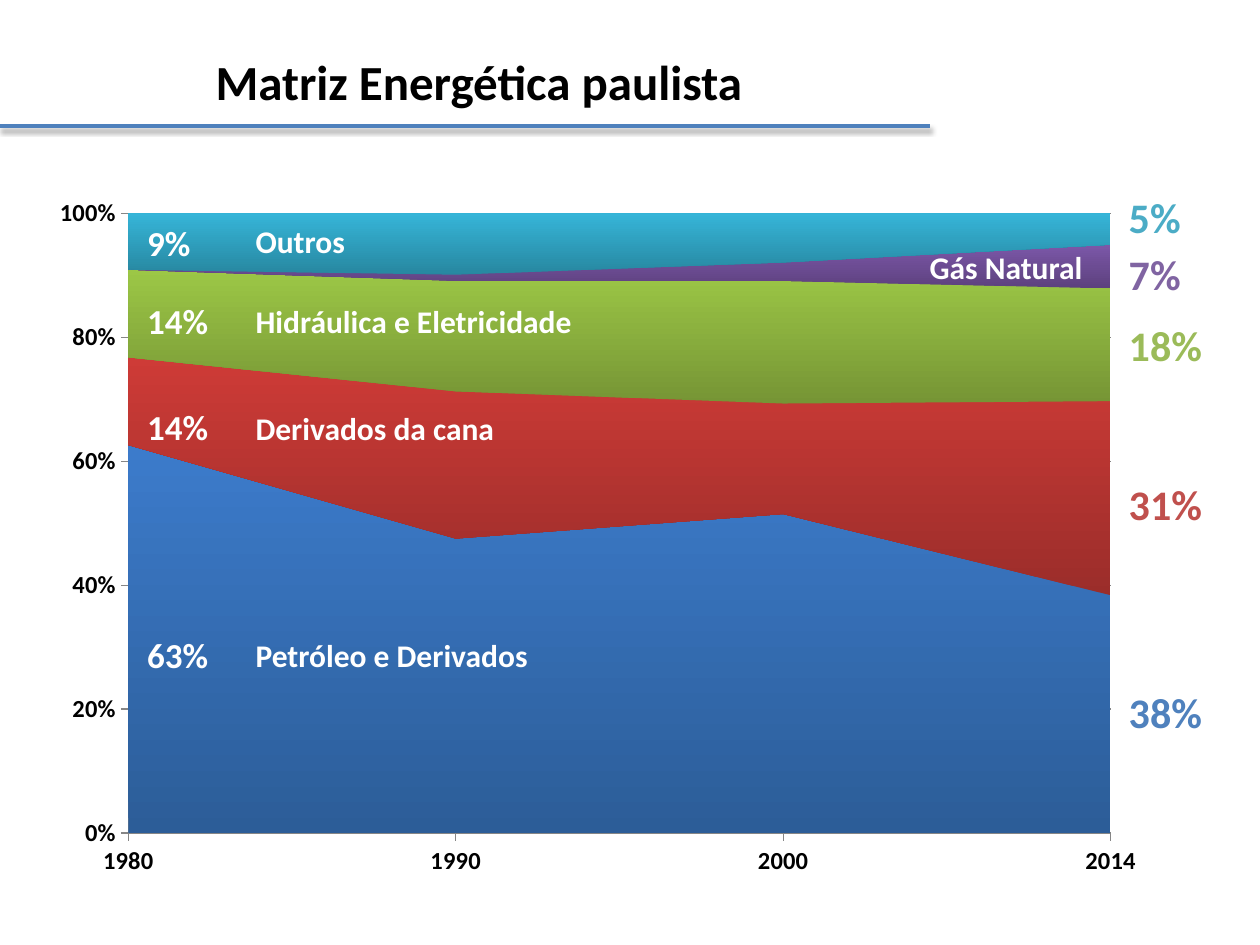
from typing import NamedTuple

import pptx
import pptx.chart.data
import pptx.dml.color
import pptx.enum.chart
import pptx.enum.shapes
import pptx.enum.text
import pptx.oxml
import pptx.oxml.ns
import pptx.util

Inches = pptx.util.Inches
Pt = pptx.util.Pt
RGBColor = pptx.dml.color.RGBColor

FONT = "Calibri"
BLACK = RGBColor(0x00, 0x00, 0x00)
WHITE = RGBColor(0xFF, 0xFF, 0xFF)
GRAY = RGBColor(0x86, 0x86, 0x86)
BLUE = RGBColor(0x4F, 0x81, 0xBD)
RED = RGBColor(0xC0, 0x50, 0x4D)
GREEN = RGBColor(0x9B, 0xBB, 0x59)
PURPLE = RGBColor(0x80, 0x64, 0xA2)
TEAL = RGBColor(0x4B, 0xAC, 0xC6)

YEARS = ["1980", "1990", "2000", "2014"]


class Source(NamedTuple):
    """One energy source: its shares by year and the shades of its area."""
    shares: tuple[int, ...]
    dark: RGBColor
    light: RGBColor


class Label(NamedTuple):
    text: str
    left: float
    top: float
    width: float
    height: float
    size: int
    color: RGBColor


SOURCES = [
    Source((62, 48, 52, 38), RGBColor(0x2C, 0x5D, 0x98), RGBColor(0x3C, 0x7B, 0xCB)),
    Source((14, 24, 18, 31), RGBColor(0x9B, 0x2D, 0x2A), RGBColor(0xCE, 0x3B, 0x37)),
    Source((14, 18, 20, 18), RGBColor(0x76, 0x95, 0x35), RGBColor(0x9C, 0xC7, 0x46)),
    Source((0, 1, 3, 7), RGBColor(0x5D, 0x41, 0x7E), RGBColor(0x7B, 0x57, 0xA8)),
    Source((9, 10, 8, 5), RGBColor(0x27, 0x87, 0xA0), RGBColor(0x36, 0xB5, 0xD8)),
]

LABELS = [
    *(Label(share, 8.86, top, 0.79, 0.5, 24, color) for share, top, color in [
        ("5%", 1.47, TEAL), ("7%", 1.92, PURPLE), ("18%", 2.49, GREEN),
        ("31%", 3.75, RED), ("38%", 5.4, BLUE)]),
    *(Label(name, 1.93, top, 4.41, 0.4, 18, WHITE) for name, top in [
        ("Petróleo e Derivados", 5.0), ("Derivados da cana", 3.2),
        ("Hidráulica e Eletricidade", 2.35), ("Outros", 1.71)]),
    Label("Gás Natural", 7.28, 1.92, 1.57, 0.4, 18, WHITE),
    *(Label(share, 1.07, top, 0.71, 0.44, 20, WHITE) for share, top in [
        ("9%", 1.71), ("14%", 2.33), ("14%", 3.17), ("63%", 4.98)]),
]

RULE_SHADOW = (
    f'<a:effectLst {pptx.oxml.ns.nsdecls("a")}>'
    '<a:outerShdw blurRad="40000" dist="20000" dir="5400000" rotWithShape="0">'
    '<a:srgbClr val="000000"><a:alpha val="38000"/></a:srgbClr>'
    '</a:outerShdw></a:effectLst>'
)
PLOT_LAYOUT = (
    f'<c:layout {pptx.oxml.ns.nsdecls("c")}><c:manualLayout>'
    '<c:layoutTarget val="inner"/><c:xMode val="edge"/><c:yMode val="edge"/>'
    '<c:x val="0.08"/><c:y val="0.04"/><c:w val="0.88"/><c:h val="0.88"/>'
    '</c:manualLayout></c:layout>'
)


def style_font(font, size: int, color: RGBColor) -> None:
    font.name = FONT
    font.size = Pt(size)
    font.bold = True
    font.color.rgb = color


def add_header(slide) -> None:
    rule = slide.shapes.add_connector(
        pptx.enum.shapes.MSO_CONNECTOR.STRAIGHT,
        Inches(0), Inches(1), Inches(7.38), Inches(1))
    rule.line.color.rgb = BLUE
    rule.line.width = Pt(2)
    rule._element.spPr.append(pptx.oxml.parse_xml(RULE_SHADOW))

    title = slide.shapes.title
    title.left, title.top = Inches(0.28), Inches(0.29)
    title.width, title.height = Inches(7.04), Inches(0.7)
    title.text_frame.text = "Matriz Energética paulista"
    title.text_frame.vertical_anchor = pptx.enum.text.MSO_ANCHOR.MIDDLE
    heading = title.text_frame.paragraphs[0]
    heading.alignment = pptx.enum.text.PP_ALIGN.CENTER
    style_font(heading.runs[0].font, 28, BLACK)


def add_energy_chart(slide) -> None:
    chart_data = pptx.chart.data.CategoryChartData()
    chart_data.categories = YEARS
    for number, source in enumerate(SOURCES, 1):
        chart_data.add_series(f"Series {number}", source.shares)
    chart = slide.shapes.add_chart(
        pptx.enum.chart.XL_CHART_TYPE.AREA_STACKED_100,
        Inches(0.31), Inches(1.47), Inches(8.86), Inches(5.59), chart_data).chart
    chart.has_legend = False
    chart.has_title = False
    style_font(chart.font, 14, BLACK)

    for series, source in zip(chart.plots[0].series, SOURCES):
        fill = series.format.fill
        fill.gradient()
        fill.gradient_angle = 90
        for stop, color in zip(fill.gradient_stops, (source.dark, source.light)):
            stop.color.rgb = color

    shares = chart.value_axis
    shares.major_unit = 0.2
    shares.minimum_scale, shares.maximum_scale = 0, 1
    shares.has_major_gridlines = True
    shares.major_gridlines.format.line.color.rgb = GRAY
    shares.tick_labels.number_format = "0%"
    shares.tick_labels.number_format_is_linked = False
    for axis in (shares, chart.category_axis):
        axis.major_tick_mark = pptx.enum.chart.XL_TICK_MARK.OUTSIDE
        axis.minor_tick_mark = pptx.enum.chart.XL_TICK_MARK.NONE
        axis.format.line.color.rgb = GRAY

    plot_area = chart._chartSpace.chart.plotArea
    for crossing in plot_area.iter(pptx.oxml.ns.qn("c:crossBetween")):
        crossing.set("val", "midCat")
    for layout in plot_area.findall(pptx.oxml.ns.qn("c:layout")):
        plot_area.remove(layout)
    plot_area.insert(0, pptx.oxml.parse_xml(PLOT_LAYOUT))


def add_label(slide, label: Label) -> None:
    box = slide.shapes.add_textbox(
        Inches(label.left), Inches(label.top),
        Inches(label.width), Inches(label.height))
    frame = box.text_frame
    frame.word_wrap = True
    frame.auto_size = pptx.enum.text.MSO_AUTO_SIZE.SHAPE_TO_FIT_TEXT
    frame.text = label.text
    style_font(frame.paragraphs[0].runs[0].font, label.size, label.color)


def main() -> None:
    presentation = pptx.Presentation()
    presentation.slide_width = Inches(10)
    presentation.slide_height = Inches(7.5)
    slide = presentation.slides.add_slide(
        presentation.slide_layouts.get_by_name("Title Only"))
    add_header(slide)
    add_energy_chart(slide)
    for label in LABELS:
        add_label(slide, label)
    presentation.save("out.pptx")


if __name__ == "__main__":
    main()
